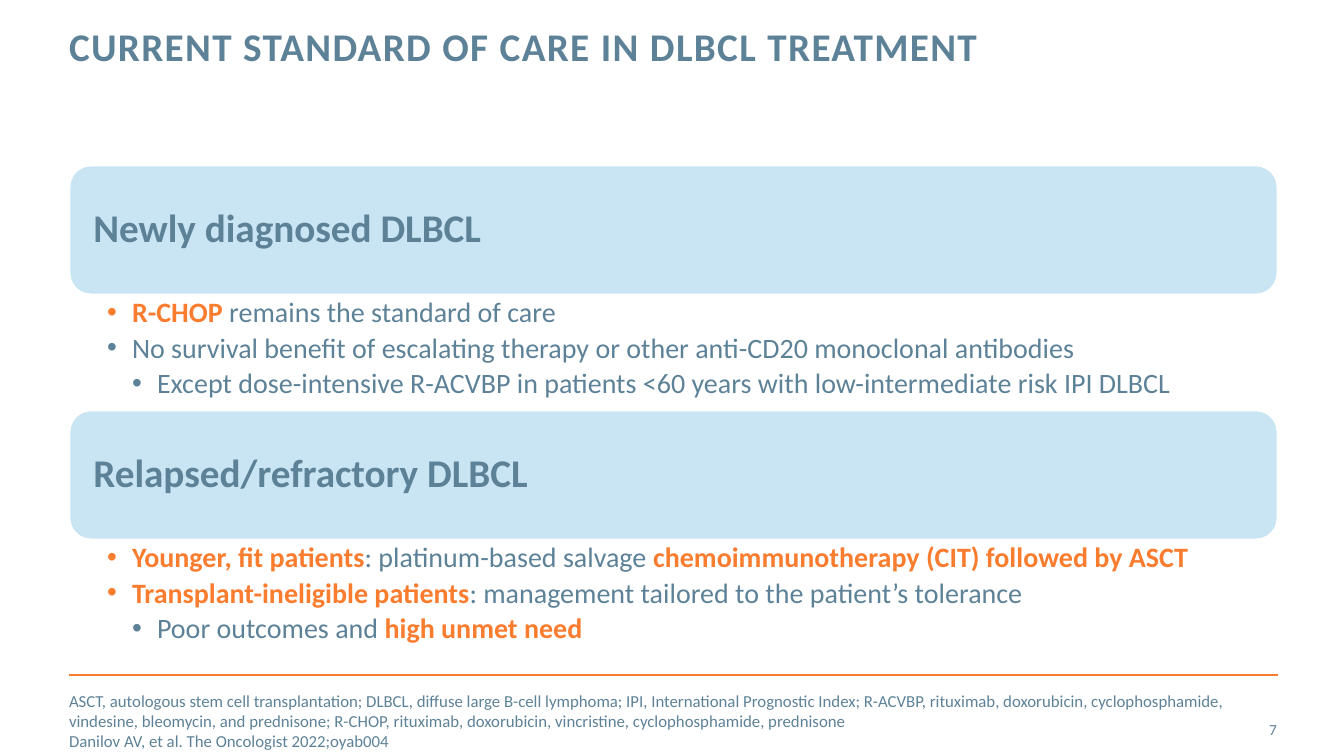
from lxml.etree import SubElement
from pptx import Presentation
from pptx.dml.color import RGBColor
from pptx.enum.shapes import MSO_CONNECTOR, MSO_SHAPE
from pptx.enum.text import MSO_ANCHOR, MSO_AUTO_SIZE, PP_ALIGN
from pptx.oxml.ns import qn
from pptx.util import Pt

PX = 914400 / 100.8
COLORS = {
    "slate": RGBColor.from_string("5D8298"),
    "orange": RGBColor.from_string("FA7C2E"),
    "sky": RGBColor.from_string("C9E5F3"),
    "white": RGBColor.from_string("FFFFFF"),
}
LEFT, WIDTH = 69, 1209
SECTION_TOP, SECTION_STEP = 165, 245
HEADING_HEIGHT, LIST_HEIGHT = 130, 115
INDENT = 25

# Each list line is (level, [(words, highlighted), ...])
SECTIONS = [
    ("Newly diagnosed DLBCL", [
        (0, [("R-CHOP", True), (" remains the standard of care", False)]),
        (0, [("No survival benefit of escalating therapy or other "
              "anti-CD20 monoclonal antibodies", False)]),
        (1, [("Except dose-intensive R-ACVBP in patients <60 years with "
              "low-intermediate risk IPI DLBCL", False)]),
    ]),
    ("Relapsed/refractory DLBCL", [
        (0, [("Younger, fit patients", True),
             (": platinum-based salvage ", False),
             ("chemoimmunotherapy (CIT) followed by ASCT", True)]),
        (0, [("Transplant-ineligible patients", True),
             (": management tailored to the patient’s tolerance", False)]),
        (1, [("Poor outcomes and ", False), ("high unmet need", True)]),
    ]),
]
FOOTNOTE = (
    "ASCT, autologous stem cell transplantation; DLBCL, diffuse large B-cell "
    "lymphoma; IPI, International Prognostic Index; R-ACVBP, rituximab, "
    "doxorubicin, cyclophosphamide, vindesine, bleomycin, and prednisone; "
    "R-CHOP, rituximab, doxorubicin, vincristine, cyclophosphamide, prednisone\n"
    "Danilov AV, et al. The Oncologist 2022;oyab004"
)


def place(shape, box, insets=(0, 0, 0, 0), anchor=MSO_ANCHOR.TOP):
    """Set a shape's box and its text insets, all in px, and return its text frame."""
    for side, length in zip(("left", "top", "width", "height"), box):
        setattr(shape, side, round(length * PX))
    frame = shape.text_frame
    for side, length in zip(("left", "top", "right", "bottom"), insets):
        setattr(frame, f"margin_{side}", round(length * PX))
    frame.word_wrap = True
    frame.auto_size = MSO_AUTO_SIZE.NONE
    frame.vertical_anchor = anchor
    return frame


def write(paragraph, runs, size, bold=False, color="slate", **layout):
    """Add (words, highlighted) runs; highlighted words are bold orange."""
    for name, value in {"alignment": PP_ALIGN.LEFT, "space_before": Pt(0), **layout}.items():
        setattr(paragraph, name, value)
    for words, highlighted in runs:
        run = paragraph.add_run()
        run.text = words
        values = {"name": "Calibri", "size": Pt(size), "bold": bold or highlighted}
        for name, value in values.items():
            setattr(run.font, name, value)
        run.font.color.rgb = COLORS["orange" if highlighted else color]


presentation = Presentation()
presentation.slide_width = round(1344 * PX)
presentation.slide_height = round(756 * PX)
slide = presentation.slides.add_slide(presentation.slide_layouts[4])
placeholders = {item.placeholder_format.idx: item for item in slide.placeholders}
title, footnote = placeholders[0], placeholders[1]
lists = placeholders[2], placeholders[4]
spare = placeholders[3].element
spare.getparent().remove(spare)

# Title
title_line = place(title, (LEFT, 27, 964, 89)).paragraphs[0]
write(title_line, [("CURRENT STANDARD OF CARE IN DLBCL TREATMENT", False)], 28,
      bold=True, line_spacing=Pt(30))
title_line.runs[0].font._element.set("spc", "100")

# Sections: a heading band with its list below
for number, ((heading, lines), treatments) in enumerate(zip(SECTIONS, lists)):
    top = SECTION_TOP + number * SECTION_STEP
    band = slide.shapes.add_shape(MSO_SHAPE.ROUNDED_RECTANGLE, 0, 0, 0, 0)
    band.shadow.inherit = False
    band.fill.solid()
    band.fill.fore_color.rgb = COLORS["sky"]
    band.line.color.rgb = COLORS["white"]
    band.line.width = Pt(2)
    band_text = place(band, (LEFT, top, WIDTH, HEADING_HEIGHT), (18, 12, 18, 12),
                      MSO_ANCHOR.MIDDLE)
    write(band_text.paragraphs[0], [(heading, False)], 28, bold=True, line_spacing=0.9)

    list_text = place(treatments, (LEFT, top + HEADING_HEIGHT, WIDTH, LIST_HEIGHT),
                      (38, 3, 16, 3))
    for position, (level, runs) in enumerate(lines):
        paragraph = list_text.add_paragraph() if position else list_text.paragraphs[0]
        properties = paragraph._p.get_or_add_pPr()
        properties.set("marL", str(round((level + 1) * INDENT * PX)))
        properties.set("indent", str(round(-INDENT * PX)))
        SubElement(properties, qn("a:buChar"), char="•")
        write(paragraph, runs, 20, level=level, line_spacing=0.9, space_after=Pt(4))

# Footer
rule = slide.shapes.add_connector(
    MSO_CONNECTOR.STRAIGHT,
    *(round(length * PX) for length in (LEFT, 675, LEFT + WIDTH, 675)))
rule.line.color.rgb = COLORS["orange"]
rule.line.width = Pt(2)
SubElement(rule._element.spPr, qn("a:effectLst"))

footnote_text = place(footnote, (LEFT, 701, 1182, 40), anchor=MSO_ANCHOR.MIDDLE)
for position, note in enumerate(FOOTNOTE.split("\n")):
    paragraph = footnote_text.add_paragraph() if position else footnote_text.paragraphs[0]
    write(paragraph, [(note, False)], 12)

page_number = slide.shapes.add_textbox(0, 0, 0, 0)
page_text = place(page_number, (1190, 709, 87, 40), anchor=MSO_ANCHOR.MIDDLE)
write(page_text.paragraphs[0], [("7", False)], 11, alignment=PP_ALIGN.RIGHT)

presentation.save("out.pptx")
